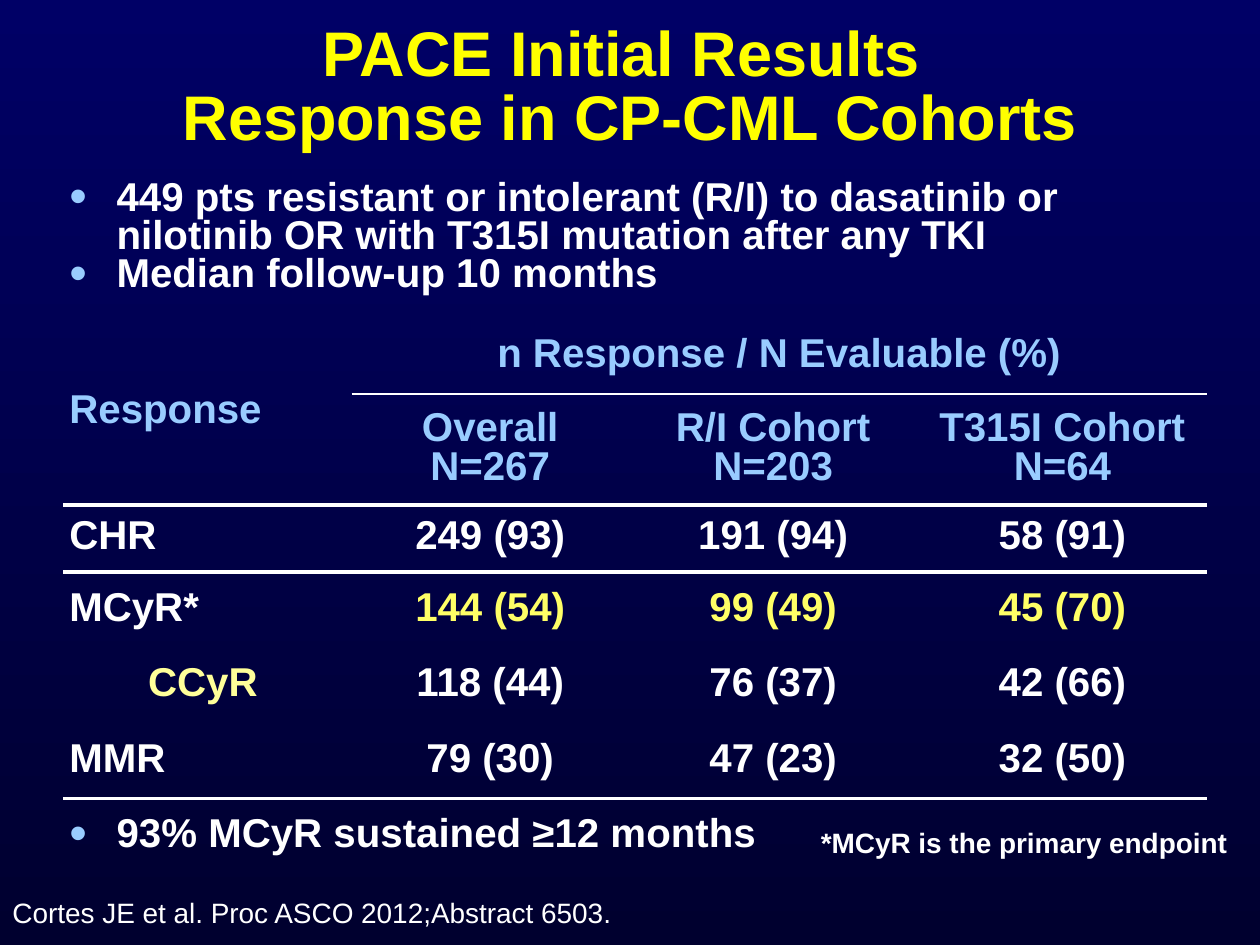
from dataclasses import dataclass

from lxml import etree
from pptx import Presentation
from pptx.dml.color import RGBColor
from pptx.enum.text import MSO_ANCHOR, MSO_AUTO_SIZE, PP_ALIGN
from pptx.oxml.ns import qn
from pptx.util import Pt

CENTER, LEFT = PP_ALIGN.CENTER, PP_ALIGN.LEFT
MIDDLE, TOP = MSO_ANCHOR.MIDDLE, MSO_ANCHOR.TOP
NO_AUTOFIT = MSO_AUTO_SIZE.NONE
TITLE_ONLY = 5
NO_STYLE_NO_GRID = "{2D5ABB26-0587-4C30-8999-92F81FD0307C}"


@dataclass(frozen=True)
class Theme:
    font: str = "Arial"
    top: str = "000066"
    bottom: str = "00002F"
    title: str = "FFFF00"
    text: str = "FFFFFF"
    heading: str = "99CCFF"
    highlight: str = "FFFF66"
    sublabel: str = "FFFF99"
    title_size: int = 36
    table_size: int = 23
    note_size: int = 16
    spacing: float = 0.85


THEME = Theme()
COLUMN_WIDTHS = (165, 158.4, 165, 165.6)
ROW_HEIGHTS = (92, 43.2, 63.4, 38.2, 43.2, 43.2, 43.2, 43.2)
RESULTS = (
    ("CHR", "249 (93)", "191 (94)", "58 (91)"),
    ("MCyR*", "144 (54)", "99 (49)", "45 (70)"),
    ("CCyR", "118 (44)", "76 (37)", "42 (66)"),
    ("MMR", "79 (30)", "47 (23)", "32 (50)"),
)
COHORTS = ("Overall\nN=267", "R/I Cohort\nN=203", "T315I Cohort\nN=64")
# Row above the line, first column, line width
RULES = ((1, 1, 1), (2, 0, 2.25), (6, 0, 2.25))


def style_text(frame, size, color=THEME.text, bold=True, align=LEFT, spacing=None):
    for paragraph in frame.paragraphs:
        paragraph.alignment = align
        if spacing:
            paragraph.line_spacing = spacing
        for span in paragraph.runs:
            span.font.name = THEME.font
            span.font.size = Pt(size)
            span.font.bold = bold
            span.font.color.rgb = RGBColor.from_string(color)


def paint_background(page):
    fill = page.background.fill
    fill.gradient()
    fill.gradient_angle = 270
    for stop, color in zip(fill.gradient_stops, (THEME.top, THEME.bottom)):
        stop.color.rgb = RGBColor.from_string(color)


def set_title(page, text):
    title = page.shapes.title
    title.left, title.top, title.width, title.height = Pt(0), Pt(18), Pt(720), Pt(66)
    frame = title.text_frame
    frame.text = text
    frame.auto_size = NO_AUTOFIT
    frame.vertical_anchor = MIDDLE
    style_text(frame, THEME.title_size, THEME.title, align=CENTER, spacing=THEME.spacing)


def add_note(page, text, left, top, width, height, bold=False, space_before=0):
    box = page.shapes.add_textbox(Pt(left), Pt(top), Pt(width), Pt(height))
    frame = box.text_frame
    frame.word_wrap = True
    frame.vertical_anchor = TOP
    frame.text = text
    frame.paragraphs[0].space_before = Pt(space_before)
    style_text(frame, THEME.note_size, bold=bold)


def fill_cell(cell, text, color=THEME.text, align=LEFT):
    cell.text = text
    style_text(cell.text_frame, THEME.table_size, color, align=align, spacing=THEME.spacing)


def indent(paragraph, left, first=0):
    properties = paragraph._p.get_or_add_pPr()
    properties.set("marL", str(Pt(left)))
    properties.set("indent", str(Pt(first)))
    return properties


def add_bullets(cell):
    for paragraph in cell.text_frame.paragraphs:
        properties = indent(paragraph, 27, -27)
        color = etree.SubElement(properties, qn("a:buClr"))
        etree.SubElement(color, qn("a:srgbClr"), val=THEME.heading)
        etree.SubElement(properties, qn("a:buSzPct"), val="125000")
        etree.SubElement(properties, qn("a:buFont"), typeface=THEME.font)
        etree.SubElement(properties, qn("a:buChar"), char="•")


def add_border(cell, side, width):
    line = etree.SubElement(cell._tc.get_or_add_tcPr(), qn(side), w=str(Pt(width)))
    fill = etree.SubElement(line, qn("a:solidFill"))
    etree.SubElement(fill, qn("a:srgbClr"), val=THEME.text)


def add_blank_table(page):
    table = page.shapes.add_table(
        len(ROW_HEIGHTS), len(COLUMN_WIDTHS), Pt(36), Pt(90),
        Pt(sum(COLUMN_WIDTHS)), Pt(sum(ROW_HEIGHTS))).table
    table.first_row = table.horz_banding = False
    table._tbl.tblPr.find(qn("a:tableStyleId")).text = NO_STYLE_NO_GRID
    for column, width in zip(table.columns, COLUMN_WIDTHS):
        column.width = Pt(width)
    for row, height in zip(table.rows, ROW_HEIGHTS):
        row.height = Pt(height)
    for row, first, width in RULES:
        for column in range(first, len(COLUMN_WIDTHS)):
            add_border(table.cell(row, column), "a:lnB", width)
            add_border(table.cell(row + 1, column), "a:lnT", width)
    for cell in table.iter_cells():
        cell.fill.background()
        cell.vertical_anchor = MIDDLE
        cell.margin_left = cell.margin_right = Pt(3.6)
        cell.margin_top = cell.margin_bottom = Pt(3.6)
    return table


def add_response_table(page):
    table = add_blank_table(page)
    for start, end in (((0, 0), (0, 3)), ((1, 0), (2, 0)), ((1, 1), (1, 3)), ((7, 0), (7, 3))):
        table.cell(*start).merge(table.cell(*end))

    bullets = {
        0: "449 pts resistant or intolerant (R/I) to dasatinib or nilotinib OR with "
           "T315I mutation after any TKI\nMedian follow-up 10 months",
        7: "93% MCyR sustained ≥12 months",
    }
    for row, text in bullets.items():
        fill_cell(table.cell(row, 0), text)
        add_bullets(table.cell(row, 0))

    fill_cell(table.cell(1, 0), "Response", THEME.heading)
    fill_cell(table.cell(1, 1), "n Response / N Evaluable (%)", THEME.heading, CENTER)
    for column, cohort in enumerate(COHORTS, 1):
        fill_cell(table.cell(2, column), cohort, THEME.heading, CENTER)

    for row, (label, *values) in enumerate(RESULTS, 3):
        label_cell = table.cell(row, 0)
        is_sublabel = label == "CCyR"
        fill_cell(label_cell, label, THEME.sublabel if is_sublabel else THEME.text)
        if is_sublabel:
            indent(label_cell.text_frame.paragraphs[0], 45)
        color = THEME.highlight if label == "MCyR*" else THEME.text
        for column, value in enumerate(values, 1):
            fill_cell(table.cell(row, column), value, color, CENTER)


def main():
    deck = Presentation()
    deck.slide_width, deck.slide_height = Pt(720), Pt(540)
    page = deck.slides.add_slide(deck.slide_layouts[TITLE_ONLY])
    paint_background(page)
    set_title(page, "PACE Initial Results \vResponse in CP-CML Cohorts")
    add_response_table(page)
    add_note(page, "*MCyR is the primary endpoint", 462, 468, 258, 26.6, bold=True)
    add_note(page, "Cortes JE et al. Proc ASCO 2012;Abstract 6503.",
             0, 508.3, 372, 30.2, space_before=3.2)
    deck.save("out.pptx")


if __name__ == "__main__":
    main()
